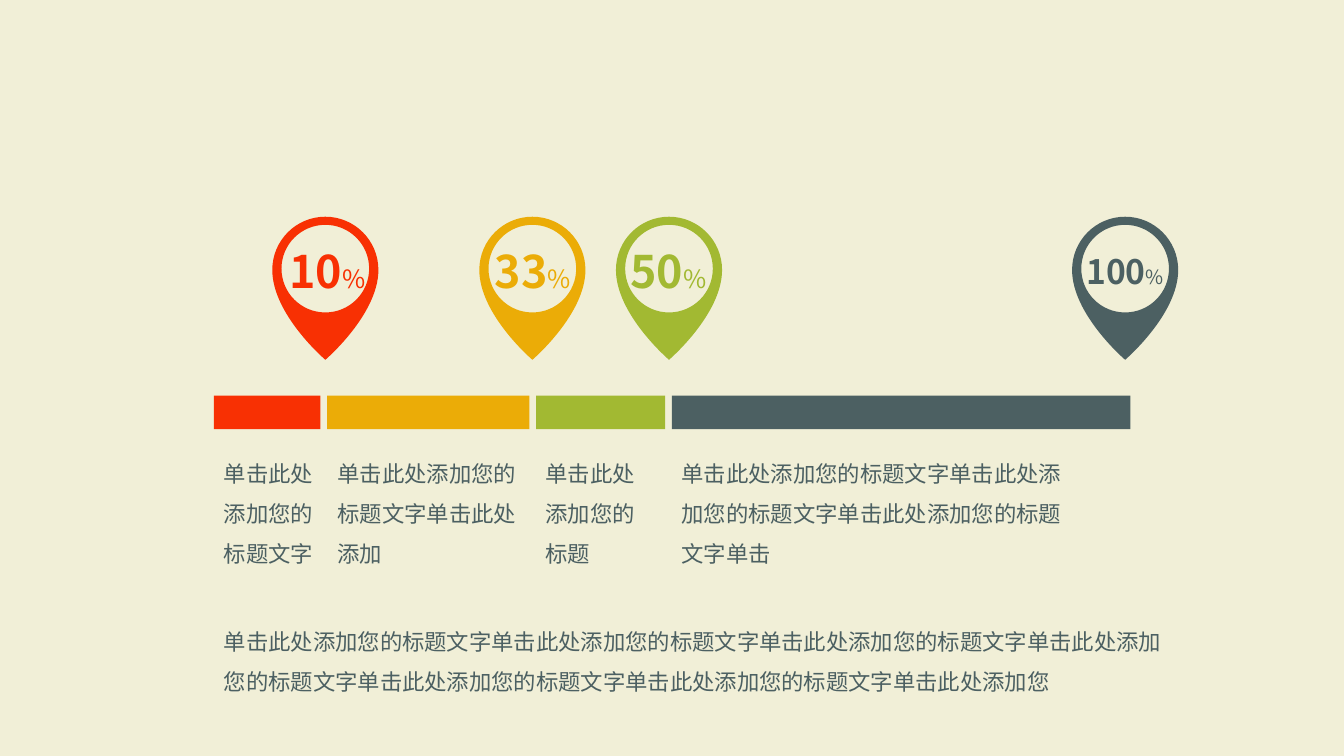
from dataclasses import dataclass

from lxml import etree
from pptx import Presentation
from pptx.dml.color import RGBColor
from pptx.enum import shapes, text
from pptx.oxml import ns
from pptx.util import Pt


@dataclass(frozen=True)
class Theme:
    font: str = "Noto Sans CJK SC"
    paper: str = "F1EFD7"
    red: str = "F83003"
    amber: str = "EBAC07"
    green: str = "A2B932"
    slate: str = "4C6062"
    body: int = 16
    value: tuple = (32, 18)  # number, percent sign
    value_small: tuple = (24, 14)


def add_text(box, runs, color, align=None, spacing=None, wrap=True):
    """Add a text box; runs is a list of (text, size, bold)."""
    tf = s.shapes.add_textbox(*map(Pt, box)).text_frame
    tf.word_wrap = wrap
    tf.auto_size = text.MSO_AUTO_SIZE.SHAPE_TO_FIT_TEXT
    p = tf.paragraphs[0]
    p.alignment = align
    p.line_spacing = spacing
    for words, size, bold in runs:
        r = p.add_run()
        r.text = words
        r.font.name = theme.font
        r.font.size = Pt(size)
        r.font.bold = bold
        r.font.color.rgb = RGBColor.from_string(color)
        ea = etree.SubElement(r.font._element, ns.qn("a:ea"))
        ea.set("typeface", theme.font)


def paint(sp, color):
    sp.shadow.inherit = False
    sp.fill.solid()
    sp.fill.fore_color.rgb = RGBColor.from_string(color)
    sp.line.fill.background()


theme = Theme()
prs = Presentation()
prs.slide_width, prs.slide_height = Pt(960), Pt(540)
s = prs.slides.add_slide(prs.slide_layouts[6])
s.background.fill.solid()
s.background.fill.fore_color.rgb = RGBColor.from_string(theme.paper)

# color, pin centre, value centre, number, sizes, value top, value width, value height
pins = [
    (theme.red, 232.4, 234, "10", theme.value, 170.6, 70.6, 46),
    (theme.amber, 380.3, 380.7, "33", theme.value, 170.6, 70.6, 46),
    (theme.green, 477.9, 477.5, "50", theme.value, 170.6, 70.6, 46),
    (theme.slate, 803.7, 803.6, "100", theme.value_small, 175.7, 73.4, 36),
]
# color, bar width, label left, label width, label
bars = [
    (theme.red, 76.1, 152.8, 80.6, "单击此处添加您的标题文字"),
    (theme.amber, 144.6, 234, 144, "单击此处添加您的标题文字单击此处添加"),
    (theme.green, 92.3, 382.6, 92.9, "单击此处添加您的标题"),
    (theme.slate, 327.5, 479.8, 298,
     "单击此处添加您的标题文字单击此处添加您的标题文字单击此处添加您的标题文字单击"),
]
pin_top = 154.8
bar_left, bar_top, bar_height, bar_gap = 152.8, 282.5, 24, 4.7
label_top, label_height = 315.4, 94.3

# Left halves of the pin's edge and hole: Bezier points from the middle of its top edge
pin_halves = [
    [(0, 0), (-20.9, 0), (-37.9, 17), (-37.9, 38), (-37.9, 69.8), (0, 102.2), (0, 102.2)],
    [(0, 68.4), (-17.3, 68.4), (-31.3, 54.4), (-31.3, 37.1), (-31.3, 19.8), (-17.3, 5.8),
     (0, 5.8)],
]

for color, centre, *_ in reversed(pins):
    edge, hole = [
        [(Pt(centre + x), Pt(pin_top + y))
         for x, y in half + [(-x, y) for x, y in half[-2::-1]]]
        for half in pin_halves]
    builder = s.shapes.build_freeform(*edge[0])
    builder.add_line_segments(edge[1:])
    builder.move_to(*hole[0])
    builder.add_line_segments(hole[1:])
    pin = builder.convert_to_shape()
    # Every three line points become the control points and end of one curve
    lines = list(pin._element.iter(ns.qn("a:lnTo")))
    for i in range(0, len(lines), 3):
        curve = etree.Element(ns.qn("a:cubicBezTo"))
        lines[i].addprevious(curve)
        for line in lines[i:i + 3]:
            curve.append(line[0])
            line.getparent().remove(line)
    paint(pin, color)

left = bar_left
for color, width, *_ in bars:
    bar = s.shapes.add_shape(shapes.MSO_SHAPE.RECTANGLE, Pt(left), Pt(bar_top),
                             Pt(width), Pt(bar_height))
    paint(bar, color)
    left += width + bar_gap

for color, _, centre, number, sizes, top, width, height in pins:
    add_text((centre - width / 2, top, width, height),
             [(number, sizes[0], True), ("%", sizes[1], False)],
             color, align=text.PP_ALIGN.CENTER, wrap=False)

for _, _, label_left, width, label in bars:
    add_text((label_left, label_top, width, label_height),
             [(label, theme.body, False)], theme.slate, spacing=1.5)

summary = "单击此处添加您的标题文字" * 6 + "单击此处添加您"
add_text((bar_left, 435.2, 687.6, 65.5),
         [(summary, theme.body, False)], theme.slate, spacing=1.5)

prs.save("out.pptx")
